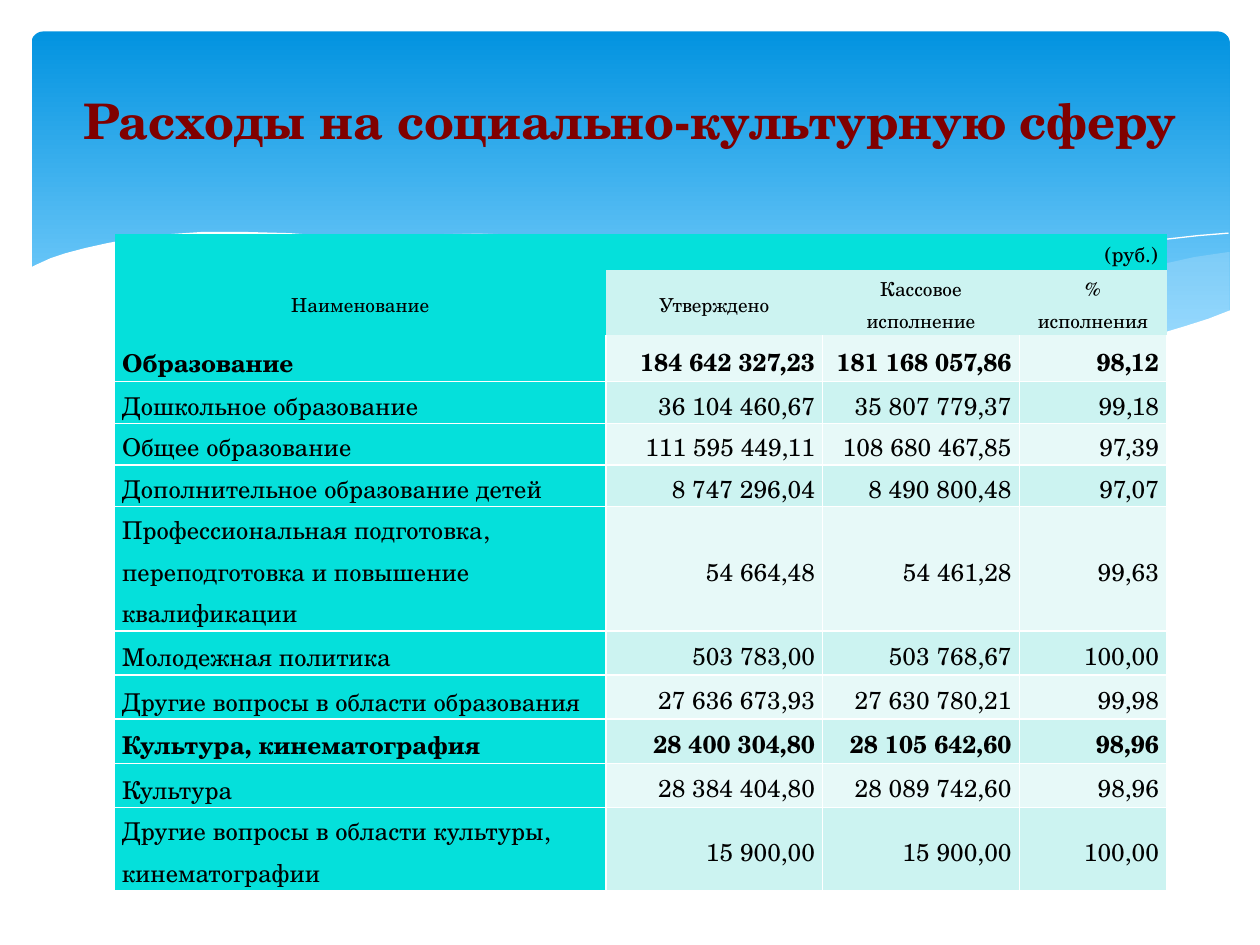
import dataclasses

import pptx
import pptx.dml.color
import pptx.enum.shapes
import pptx.enum.text
import pptx.oxml.ns
import pptx.util
from lxml import etree
from pptx.util import Inches

ALIGN = pptx.enum.text.PP_ALIGN
ANCHOR = pptx.enum.text.MSO_ANCHOR


@dataclasses.dataclass(frozen=True)
class Theme:
    font: str = "TeX Gyre Schola"
    title_size: int = 28
    unit_size: int = 12
    heading_size: int = 11
    body_size: int = 14
    title: str = "800000"
    text: str = "000000"
    white: str = "FFFFFF"
    sky_top: str = "0293E0"
    sky_bottom: str = "83D3FE"
    wave: str = "C6E7FC"
    label: str = "05E0DB"
    band_dark: str = "CCF3F1"
    band_light: str = "E7F9F8"


THEME = Theme()
NO_GRID_STYLE = "{2D5ABB26-0587-4C30-8999-92F81FD0307C}"

# Outlines of the waves, as x and y in inches
RIGHT_WAVE = [
    (9.75, 2), (9.48, 2.04), (9.21, 2.1), (8.91, 2.16), (8.61, 2.23), (8.05, 2.37),
    (7.53, 2.48), (7.06, 2.57), (6.61, 2.65), (6.91, 2.69), (7.19, 2.72), (7.45, 2.75),
    (7.69, 2.77), (8.03, 2.78), (8.35, 2.77), (8.63, 2.75), (8.89, 2.72), (9.13, 2.67),
    (9.35, 2.62), (9.49, 2.57), (9.76, 2.47), (9.76, 2)]
MIDDLE_WAVE = [
    (8.93, 2.73), (8.66, 2.69), (8.07, 2.6), (7.41, 2.47), (6.68, 2.31), (6.29, 2.22),
    (5.84, 2.11), (5.41, 2.03), (5.02, 1.96), (4.65, 1.91), (4.2, 1.87), (3.8, 1.85),
    (3.44, 1.86), (3.13, 1.88), (2.86, 1.91), (3.23, 1.96), (3.62, 2.03), (4.04, 2.11),
    (4.49, 2.22), (5.3, 2.4), (5.84, 2.52), (6.34, 2.61), (6.8, 2.68), (7.22, 2.74),
    (7.61, 2.77), (8.07, 2.78), (8.48, 2.77), (8.76, 2.75)]
LEFT_CREST = [
    (3.09, 1.95), (3.28, 1.92), (3.53, 1.89), (3.87, 1.87), (4.33, 1.87), (4.69, 1.89),
    (5.1, 1.92), (5.56, 1.97), (6.08, 2.04), (6.65, 2.13), (7.27, 2.26), (7.95, 2.41),
    (8.69, 2.61), (9.07, 2.72)]
RIGHT_CREST = [
    (6.13, 2.57), (6.53, 2.46), (6.95, 2.35), (7.48, 2.23), (8.06, 2.1), (8.66, 1.99),
    (8.95, 1.94), (9.24, 1.9), (9.51, 1.87), (9.75, 1.85)]
WHITE_WAVE = [
    (9.77, 2.46), (9.59, 2.53), (9.4, 2.59), (9.2, 2.65), (8.99, 2.69), (8.75, 2.73),
    (8.5, 2.75), (8.09, 2.77), (7.78, 2.76), (7.44, 2.74), (7.08, 2.7), (6.68, 2.65),
    (6.26, 2.58), (5.79, 2.5), (5.29, 2.39), (4.75, 2.27), (4.18, 2.13), (3.65, 2.02),
    (3.16, 1.94), (2.71, 1.88), (2.3, 1.85), (1.93, 1.84), (1.61, 1.84), (1.32, 1.86),
    (1.06, 1.89), (0.85, 1.93), (0.67, 1.97), (0.52, 2.01), (0.4, 2.05), (0.29, 2.1),
    (0.23, 2.13), (0.23, 3.29), (9.77, 3.29)]

COLUMN_WIDTHS = [3.9, 1.72, 1.56, 1.17]
ROW_HEIGHTS = [0.24, 0.44, 0.37, 0.33, 0.33, 0.33, 0.9, 0.35, 0.35, 0.35, 0.35, 0.63]
UNIT = "(руб.)"
HEADINGS = ["Наименование", "Утверждено", "Кассовое исполнение", "% исполнения"]
SPENDING = [
    ["Образование", "184 642 327,23", "181 168 057,86", "98,12"],
    ["Дошкольное образование", "36 104 460,67", "35 807 779,37", "99,18"],
    ["Общее образование", "111 595 449,11", "108 680 467,85", "97,39"],
    ["Дополнительное образование детей", "8 747 296,04", "8 490 800,48", "97,07"],
    ["Профессиональная подготовка, переподготовка и повышение квалификации",
     "54 664,48", "54 461,28", "99,63"],
    ["Молодежная политика", "503 783,00", "503 768,67", "100,00"],
    ["Другие вопросы в области образования", "27 636 673,93", "27 630 780,21", "99,98"],
    ["Культура, кинематография", "28 400 304,80", "28 105 642,60", "98,96"],
    ["Культура", "28 384 404,80", "28 089 742,60", "98,96"],
    ["Другие вопросы в области культуры, кинематографии",
     "15 900,00", "15 900,00", "100,00"],
]
SECTIONS = {"Образование", "Культура, кинематография"}


def rgb(value):
    return pptx.dml.color.RGBColor.from_string(value)


def format_text(frame, size, color, align, bold=False):
    for para in frame.paragraphs:
        para.alignment = align
        for span in para.runs:
            span.font.name = THEME.font
            span.font.size = pptx.util.Pt(size)
            span.font.bold = bold
            span.font.color.rgb = rgb(color)


def add_sky(page):
    sky = page.shapes.add_shape(
        pptx.enum.shapes.MSO_SHAPE.ROUNDED_RECTANGLE,
        Inches(0.25), Inches(0.25), Inches(9.51), Inches(2.7))
    sky.adjustments[0] = 0.034
    sky.shadow.inherit = False
    sky.line.fill.background()
    sky.fill.gradient()
    sky.fill.gradient_angle = 270
    stops = [(0, THEME.sky_top), (0.9, THEME.sky_bottom)]
    for stop, (position, color) in zip(sky.fill.gradient_stops, stops):
        stop.position = position
        stop.color.rgb = rgb(color)


def add_outline(page, points, closed):
    corners = [(Inches(x), Inches(y)) for x, y in points]
    builder = page.shapes.build_freeform(*corners[0])
    builder.add_line_segments(corners[1:], close=closed)
    shape = builder.convert_to_shape()
    shape.shadow.inherit = False
    return shape


def add_wave(page, points, color, opacity=100):
    wave = add_outline(page, points, True)
    wave.line.fill.background()
    wave.fill.solid()
    wave.fill.fore_color.rgb = rgb(color)
    if opacity < 100:
        tint = wave.fill._xPr.find(".//" + pptx.oxml.ns.qn("a:srgbClr"))
        etree.SubElement(tint, pptx.oxml.ns.qn("a:alpha"), val=str(opacity * 1000))


def add_crest(page, points):
    crest = add_outline(page, points, False)
    crest.fill.background()
    crest.line.color.rgb = rgb(THEME.white)
    crest.line.width = pptx.util.Pt(0)


def set_borders(cell, sides):
    properties = cell._tc.get_or_add_tcPr()
    for position, side in enumerate(sides):
        border = etree.Element(pptx.oxml.ns.qn("a:ln" + side), w=str(pptx.util.Pt(1)))
        fill = etree.SubElement(border, pptx.oxml.ns.qn("a:solidFill"))
        etree.SubElement(fill, pptx.oxml.ns.qn("a:srgbClr"), val=THEME.white)
        properties.insert(position, border)


def fill_cell(cell, text, color, size, align, anchor=ANCHOR.MIDDLE, bold=False, inset=0.07):
    cell.text_frame.text = text
    format_text(cell.text_frame, size, THEME.text, align, bold)
    cell.text_frame.paragraphs[0].line_spacing = 1.15
    cell.vertical_anchor = anchor
    cell.margin_left = cell.margin_right = Inches(inset)
    cell.margin_top = cell.margin_bottom = 0
    cell.fill.solid()
    cell.fill.fore_color.rgb = rgb(color)


def add_spending_table(page):
    frame = page.shapes.add_table(
        len(ROW_HEIGHTS), len(COLUMN_WIDTHS), Inches(0.91), Inches(1.86),
        Inches(sum(COLUMN_WIDTHS)), Inches(sum(ROW_HEIGHTS)))
    table = frame.table
    table.first_row = table.horz_banding = False
    table._tbl.tblPr.find(pptx.oxml.ns.qn("a:tableStyleId")).text = NO_GRID_STYLE
    for column, width in zip(table.columns, COLUMN_WIDTHS):
        column.width = Inches(width)
    for row, height in zip(table.rows, ROW_HEIGHTS):
        row.height = Inches(height)

    # Unit line and column headings
    table.cell(0, 0).merge(table.cell(0, len(COLUMN_WIDTHS) - 1))
    fill_cell(table.cell(0, 0), UNIT, THEME.label, THEME.unit_size, ALIGN.RIGHT)
    for column, heading in enumerate(HEADINGS):
        color = THEME.band_dark if column else THEME.label
        fill_cell(table.cell(1, column), heading, color, THEME.heading_size, ALIGN.CENTER)

    # Spending rows in alternating bands
    for index, values in enumerate(SPENDING):
        band = THEME.band_dark if index % 2 else THEME.band_light
        for column, value in enumerate(values):
            cell = table.cell(index + 2, column)
            color, align, anchor = (
                (band, ALIGN.RIGHT, ANCHOR.MIDDLE) if column
                else (THEME.label, ALIGN.LEFT, ANCHOR.BOTTOM))
            fill_cell(cell, value, color, THEME.body_size, align, anchor,
                      bold=values[0] in SECTIONS, inset=0.06)
            set_borders(cell, "LRTB" if index else "LRB")


def set_title(page, text):
    title = page.shapes.title
    title.left, title.top = Inches(0.5), Inches(0.6)
    title.width, title.height = Inches(9), Inches(0.71)
    title.text_frame.text = text
    title.text_frame.word_wrap = True
    title.text_frame.vertical_anchor = ANCHOR.MIDDLE
    format_text(title.text_frame, THEME.title_size, THEME.title, ALIGN.CENTER, bold=True)
    # Bring the title in front of the backdrop
    page.shapes._spTree.append(title._element)


def main():
    deck = pptx.Presentation()
    deck.slide_width, deck.slide_height = Inches(10), Inches(7.5)
    page = deck.slides.add_slide(deck.slide_layouts[5])

    # Backdrop
    add_sky(page)
    add_wave(page, RIGHT_WAVE, THEME.wave, opacity=29)
    add_wave(page, MIDDLE_WAVE, THEME.wave, opacity=40)
    add_crest(page, LEFT_CREST)
    add_crest(page, RIGHT_CREST)
    add_wave(page, WHITE_WAVE, THEME.white)

    # Content
    add_spending_table(page)
    set_title(page, "Расходы на социально-культурную сферу")
    deck.save("out.pptx")


if __name__ == "__main__":
    main()
